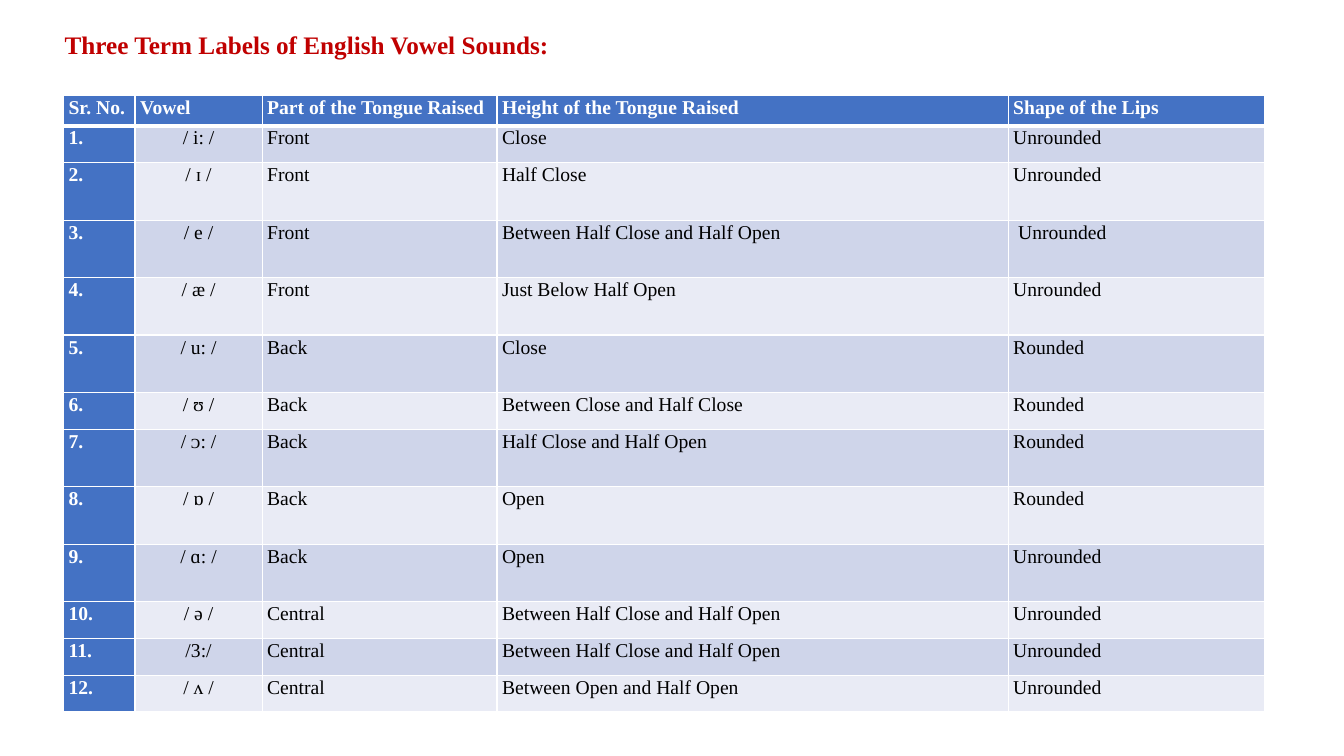
from lxml.etree import SubElement
from pptx import Presentation
from pptx.dml.color import RGBColor
from pptx.enum.text import MSO_ANCHOR, MSO_AUTO_SIZE, PP_ALIGN
from pptx.oxml.ns import qn
from pptx.util import Inches, Pt

WHITE = RGBColor(0xFF, 0xFF, 0xFF)
BLACK = RGBColor(0x00, 0x00, 0x00)
RED = RGBColor(0xC0, 0x00, 0x00)
BLUE = RGBColor(0x44, 0x72, 0xC4)
BAND_DARK = RGBColor(0xCF, 0xD5, 0xEA)
BAND_LIGHT = RGBColor(0xE9, 0xEB, 0xF5)
FONT = "Times New Roman"

HEADINGS = ("Sr. No.", "Vowel", "Part of the Tongue Raised",
            "Height of the Tongue Raised", "Shape of the Lips")
COLUMN_WIDTHS = (0.71, 1.26, 2.33, 5.07, 2.54)
HEADER_HEIGHT, SHORT, TALL = 0.3, 0.365, 0.57

# Vowel, tongue part, tongue height, lip shape, row height
VOWELS = (
    ("/ i: /", "Front", "Close", "Unrounded", SHORT),
    ("/ ɪ /", "Front", "Half Close", "Unrounded", TALL),
    ("/ e /", "Front", "Between Half Close and Half Open", " Unrounded", TALL),
    ("/ æ /", "Front", "Just Below Half Open", "Unrounded", TALL),
    ("/ u: /", "Back", "Close", "Rounded", TALL),
    ("/ ʊ /", "Back", "Between Close and Half Close", "Rounded", SHORT),
    ("/ ᴐ: /", "Back", "Half Close and Half Open", "Rounded", TALL),
    ("/ ɒ /", "Back", "Open", "Rounded", TALL),
    ("/ ɑ: /", "Back", "Open", "Unrounded", TALL),
    ("/ ə /", "Central", "Between Half Close and Half Open", "Unrounded", SHORT),
    ("/3:/", "Central", "Between Half Close and Half Open", "Unrounded", SHORT),
    ("/ ʌ /", "Central", "Between Open and Half Open", "Unrounded", SHORT),
)


def write(paragraph, text, size, color, bold):
    span = paragraph.add_run()
    span.text = text
    settings = {"name": FONT, "size": Pt(size), "bold": bold}
    for name, value in settings.items():
        setattr(span.font, name, value)
    span.font.color.rgb = color


def add_border(cell, side, width):
    line = SubElement(cell._tc.get_or_add_tcPr(), qn(f"a:{side}"), w=str(Pt(width)))
    fill = SubElement(line, qn("a:solidFill"))
    SubElement(fill, qn("a:srgbClr"), val=str(WHITE))


deck = Presentation()
deck.slide_width, deck.slide_height = Inches(13.33), Inches(7.5)
page = deck.slides.add_slide(deck.slide_layouts[5])

# Title
title = page.shapes.title
title_box = {"left": 0.54, "top": 0.24, "width": 11.29, "height": 0.71}
for name, value in title_box.items():
    setattr(title, name, Inches(value))
frame = title.text_frame
frame.word_wrap = True
frame.auto_size = MSO_AUTO_SIZE.NONE
frame.vertical_anchor = MSO_ANCHOR.TOP
frame.paragraphs[0].alignment = PP_ALIGN.LEFT
write(frame.paragraphs[0], "Three Term Labels of English Vowel Sounds:", 18, RED, True)

# Table grid
rows = [HEADINGS] + [(f"{number}.", *vowel[:4]) for number, vowel in enumerate(VOWELS, 1)]
heights = [HEADER_HEIGHT] + [vowel[4] for vowel in VOWELS]
table = page.shapes.add_table(
    len(rows), len(HEADINGS), Inches(0.63), Inches(0.95),
    Inches(sum(COLUMN_WIDTHS)), Inches(sum(heights))).table
table.first_col = True
for column, width in zip(table.columns, COLUMN_WIDTHS):
    column.width = Inches(width)
for row, height in zip(table.rows, heights):
    row.height = Inches(height)

# Table cells
margins = {"margin_left": 0.05, "margin_top": 0, "margin_right": 0.05, "margin_bottom": 0}
paragraph_format = {"line_spacing": 1.07, "space_after": Pt(8)}
for row_index, texts in enumerate(rows):
    for column_index, text in enumerate(texts):
        cell = table.cell(row_index, column_index)
        is_label = row_index == 0 or column_index == 0
        for name, value in margins.items():
            setattr(cell, name, Inches(value))

        # White rules, thicker below the header
        add_border(cell, "lnL", 1)
        add_border(cell, "lnR", 1)
        add_border(cell, "lnT", 3 if row_index == 1 else 1)
        add_border(cell, "lnB", 3 if row_index == 0 else 1)

        band = BAND_DARK if row_index % 2 else BAND_LIGHT
        cell.fill.solid()
        cell.fill.fore_color.rgb = BLUE if is_label else band

        para = cell.text_frame.paragraphs[0]
        for name, value in paragraph_format.items():
            setattr(para, name, value)
        is_vowel = row_index > 0 and column_index == 1
        para.alignment = PP_ALIGN.CENTER if is_vowel else PP_ALIGN.JUSTIFY
        write(para, text, 14, WHITE if is_label else BLACK, is_label)

deck.save("out.pptx")
